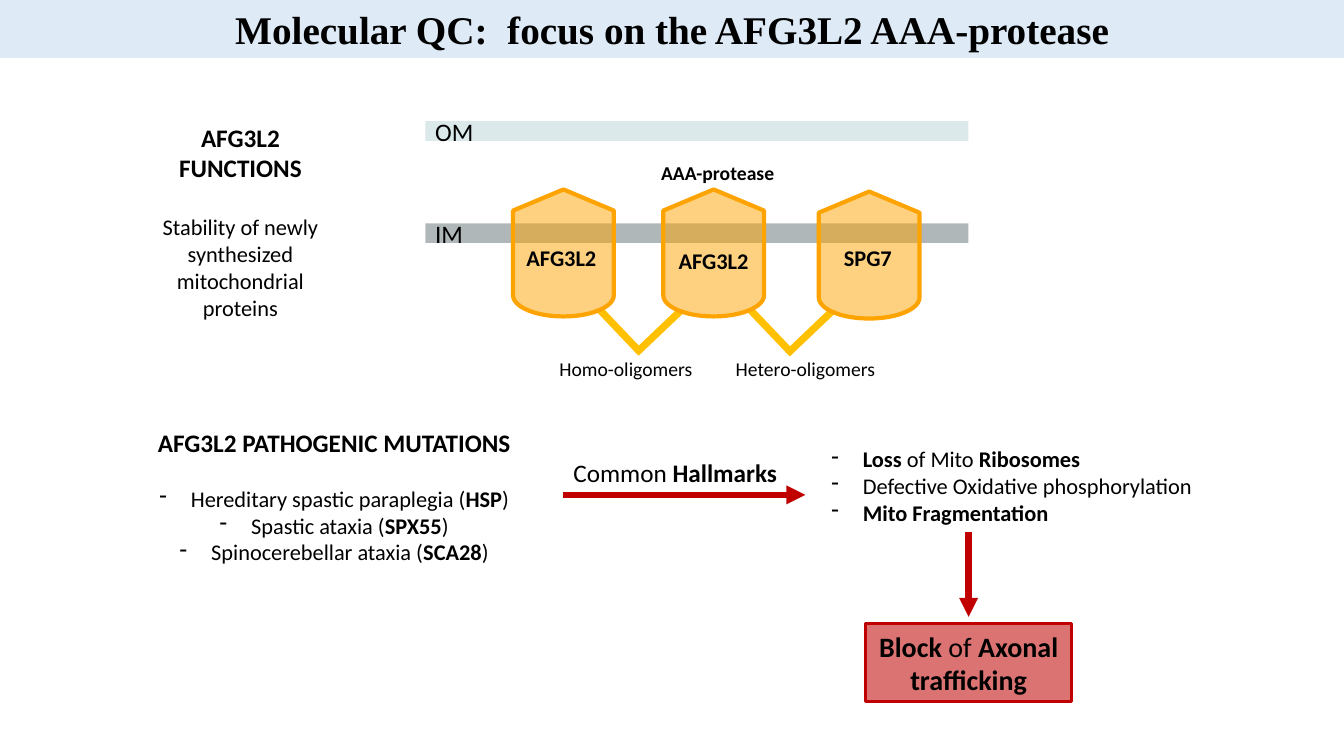
from dataclasses import dataclass
from typing import NamedTuple, Optional

from lxml.etree import SubElement
from pptx import Presentation
from pptx.dml.color import RGBColor as RGB
from pptx.enum.shapes import MSO_CONNECTOR as Connector, MSO_SHAPE as Shape
from pptx.enum.text import MSO_ANCHOR as Anchor, PP_ALIGN as Align
from pptx.oxml.ns import qn
from pptx.util import Pt


@dataclass(frozen=True)
class Theme:
    body_font: str = "Calibri"
    title_font: str = "Times New Roman"
    ink: str = "000000"
    banner: str = "DEEBF7"
    outer_membrane: str = "7BAEB5"
    inner_membrane: str = "929D9E"
    subunit: str = "FEA402"
    link: str = "FFC000"
    alert: str = "C00000"
    title: int = 28
    result: int = 20
    heading: int = 18
    body: int = 16
    caption: int = 14


class Box(NamedTuple):
    left: float
    top: float
    width: float
    height: float


class Para(NamedTuple):
    """One paragraph; parts between asterisks are bold."""
    text: str
    size: int
    align: Align = Align.CENTER
    bullet: bool = False
    after: float = 0
    font: Optional[str] = None


class Membrane(NamedTuple):
    name: str
    top: float
    color: str
    opacity: int


class Subunit(NamedTuple):
    name: str
    left: float
    top: float
    label_left: float
    label_top: float


class Oligomer(NamedTuple):
    caption: str
    link_left: float
    link_top: float
    caption_left: float


class Arrow(NamedTuple):
    x1: float
    y1: float
    x2: float
    y2: float


THEME = Theme()
BULLET_INDENT = 22.5

prs = Presentation()
prs.slide_width, prs.slide_height = Pt(960), Pt(540)
slide = prs.slides.add_slide(prs.slide_layouts[6])


def write(frame, paras: list[Para]) -> None:
    for i, para in enumerate(paras):
        line = frame.paragraphs[0] if i == 0 else frame.add_paragraph()
        line.alignment = para.align
        if para.after:
            line.space_after = Pt(para.after)
        if para.bullet:
            props = line._p.get_or_add_pPr()
            props.set("marL", str(Pt(BULLET_INDENT)))
            props.set("indent", str(-Pt(BULLET_INDENT)))
            SubElement(props, qn("a:buFontTx"))
            SubElement(props, qn("a:buChar")).set("char", "-")
        line.font.name = para.font or THEME.body_font
        line.font.size = Pt(para.size)
        line.font.color.rgb = RGB.from_string(THEME.ink)
        parts = [(part, i % 2 == 1) for i, part in enumerate(para.text.split("*")) if part]
        mixed = len(parts) > 1
        if not mixed:
            line.font.bold = parts[0][1]
        for part, bold in parts:
            run = line.add_run()
            run.text = part
            if mixed:
                run.font.bold = bold


def add_text(box: Box, *paras: Para, wrap: bool = True) -> None:
    frame = slide.shapes.add_textbox(*map(Pt, box)).text_frame
    frame.word_wrap = wrap
    write(frame, list(paras))


def add_block(kind: Shape, box: Box, fill: str, opacity: int = 100,
              line: Optional[str] = None, weight: float = 0, turn: float = 0):
    block = slide.shapes.add_shape(kind, *map(Pt, box))
    block.shadow.inherit = False
    block.rotation = turn
    block.fill.solid()
    block.fill.fore_color.rgb = RGB.from_string(fill)
    if opacity < 100:
        color = block.element.spPr.find(qn("a:solidFill"))[0]
        SubElement(color, qn("a:alpha")).set("val", str(opacity * 1000))
    if line:
        block.line.color.rgb = RGB.from_string(line)
        block.line.width = Pt(weight)
    else:
        block.line.fill.background()
    block.text_frame.vertical_anchor = Anchor.MIDDLE
    return block


def add_arrow(arrow: Arrow) -> None:
    connector = slide.shapes.add_connector(Connector.STRAIGHT, *map(Pt, arrow))
    connector.line.color.rgb = RGB.from_string(THEME.alert)
    connector.line.width = Pt(4.5)
    SubElement(connector.line._get_or_add_ln(), qn("a:tailEnd")).set("type", "triangle")
    SubElement(connector._element.spPr, qn("a:effectLst"))


# Title banner
banner = add_block(Shape.RECTANGLE, Box(0, 0, 960, 41), THEME.banner,
                   line=THEME.banner, weight=0.75)
write(banner.text_frame, [Para("*Molecular QC:  focus on the AFG3L2 AAA-protease*",
                               THEME.title, font=THEME.title_font)])

# Oligomer links, behind the subunits
for oligomer in (
    Oligomer("Homo-oligomers", 434.9, 198.9, 383),
    Oligomer("Hetero-oligomers", 542.9, 199.4, 511.2),
):
    bracket = add_block(Shape.HALF_FRAME,
                        Box(oligomer.link_left, oligomer.link_top, 44.6, 45.4),
                        THEME.link, line=THEME.link, weight=1, turn=226.4)
    bracket.adjustments[0] = bracket.adjustments[1] = 0.094
    add_text(Box(oligomer.caption_left, 251.6, 128.2, 24.5),
             Para(oligomer.caption, THEME.caption))

# Membranes
for membrane in (
    Membrane("IM", 159.6, THEME.inner_membrane, 73),
    Membrane("OM", 86.6, THEME.outer_membrane, 27),
):
    band = add_block(Shape.RECTANGLE, Box(303.8, membrane.top, 388, 14),
                     membrane.color, membrane.opacity)
    write(band.text_frame, [Para(membrane.name, THEME.heading, Align.LEFT)])

# Protease subunits
for subunit in (
    Subunit("AFG3L2", 464.4, 144.7, 476.6, 172.8),
    Subunit("SPG7", 575.5, 146.2, 586.8, 170.6),
    Subunit("AFG3L2", 357.1, 144.7, 367.9, 170.6),
):
    add_block(Shape.FLOWCHART_DISPLAY, Box(subunit.left, subunit.top, 90.7, 72),
              THEME.subunit, 50, THEME.subunit, 3, turn=90)
    add_text(Box(subunit.label_left, subunit.label_top, 66.2, 26.6),
             Para(f"*{subunit.name}*", THEME.body))
add_text(Box(465.1, 111.6, 115.2, 24.5),
         Para("*AAA-protease*", THEME.caption, Align.LEFT))

# Functions
add_text(Box(96.5, 83.5, 150.5, 150.5),
         Para("*AFG3L2 FUNCTIONS*", THEME.heading, after=22),
         Para("Stability of newly synthesized mitochondrial proteins", THEME.body))

# Pathogenic mutations
diseases = (
    "Hereditary spastic paraplegia (*HSP*)",
    "Spastic ataxia (*SPX55*)",
    "Spinocerebellar ataxia (*SCA28*)",
)
add_text(Box(95.8, 301.7, 285.8, 106.6),
         Para("*AFG3L2 PATHOGENIC MUTATIONS*", THEME.heading, after=19.5),
         *(Para(disease, THEME.body, bullet=True) for disease in diseases))

# Common hallmarks
hallmarks = (
    "*Loss* of Mito *Ribosomes*",
    "Defective Oxidative phosphorylation",
    "*Mito Fragmentation*",
)
add_text(Box(586.8, 314.6, 285.8, 65.5),
         *(Para(hallmark, THEME.body, Align.LEFT, bullet=True) for hallmark in hallmarks))
add_text(Box(402.5, 323.3, 161.3, 28.8),
         Para("Common *Hallmarks*", THEME.heading, Align.LEFT), wrap=False)

# Outcome
outcome = add_block(Shape.RECTANGLE, Box(618.5, 445.7, 146.9, 55.4),
                    THEME.alert, 55, THEME.alert, 2.25)
write(outcome.text_frame, [Para("*Block* of *Axonal trafficking*", THEME.result)])

# Arrows from mutations to hallmarks to outcome
for arrow in (Arrow(402.5, 353.5, 575.3, 353.5), Arrow(691.9, 380.2, 691.9, 440.6)):
    add_arrow(arrow)

prs.save("out.pptx")
